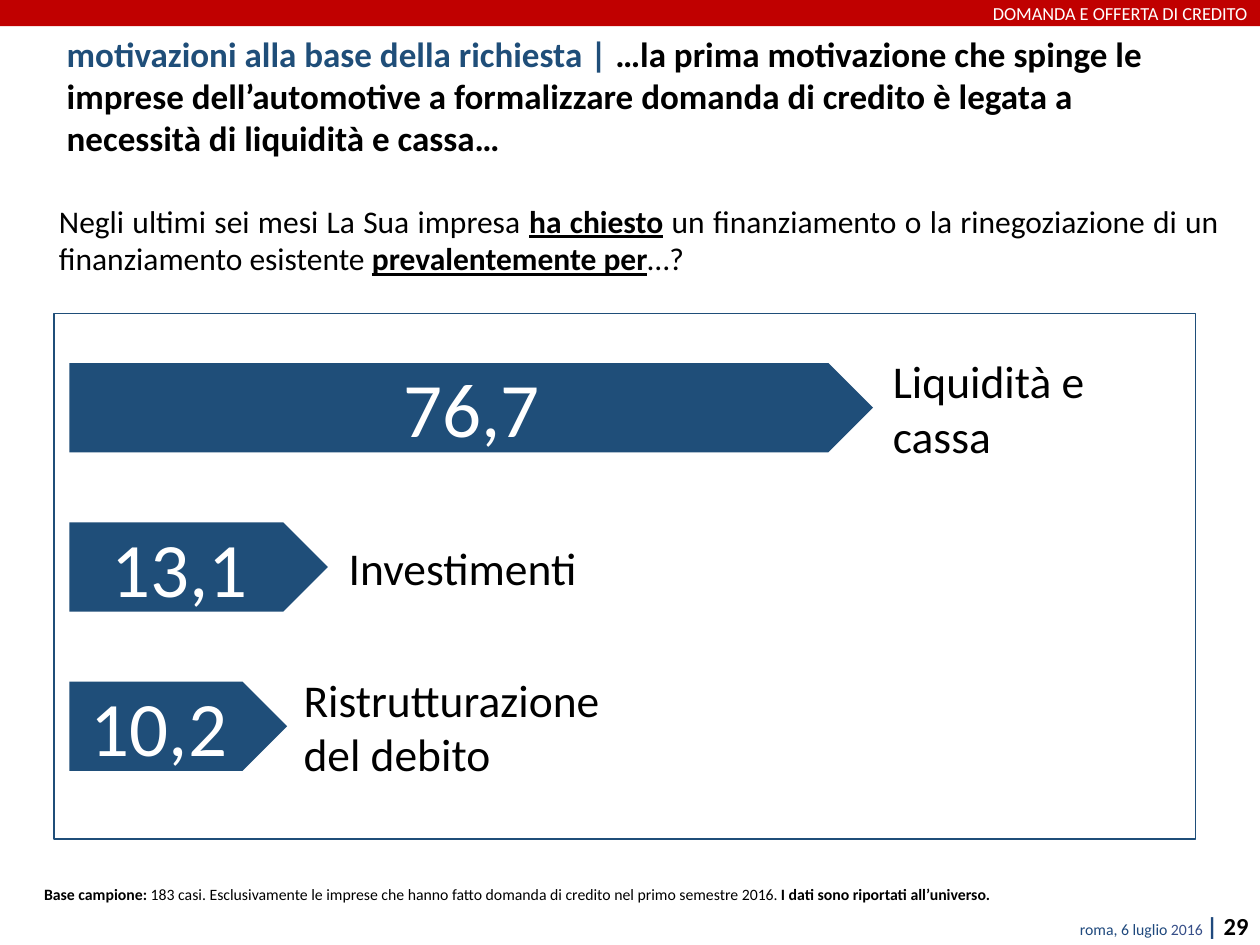
from pptx import Presentation
from pptx.dml.color import RGBColor
from pptx.enum.shapes import MSO_SHAPE
from pptx.enum.text import MSO_ANCHOR, MSO_AUTO_SIZE, PP_ALIGN
from pptx.util import Cm, Pt

NAVY, RED, WHITE, BLACK = "1F4E79", "C00000", "FFFFFF", "000000"
BLUE = "1F497D"


def tint(code):
    """Turn a hex string into a colour."""
    return RGBColor.from_string(code)


def write(frame, text, size=18, color=BLACK, align=PP_ALIGN.LEFT,
          anchor=MSO_ANCHOR.TOP, wrap=True, space=None):
    """Fill a frame with a string or with (string, format) runs."""
    frame.word_wrap = wrap
    frame.auto_size = MSO_AUTO_SIZE.NONE
    frame.vertical_anchor = anchor
    para = frame.paragraphs[0]
    para.alignment = align
    if space:
        para.line_spacing = space
    for words, look in [(text, {})] if isinstance(text, str) else text:
        run = para.add_run()
        run.text = words
        font = run.font
        font.name = "Calibri"
        font.size = Pt(look.get("size", size))
        font.color.rgb = tint(look.get("color", color))
        font.bold = look.get("bold", False)
        font.underline = look.get("under", False)


class Page:
    """Hold the deck, the current slide and its style."""

    def __init__(self):
        """Open a deck with one title-only slide."""
        self.deck = Presentation()
        self.deck.slide_width, self.deck.slide_height = Cm(25.4), Cm(19.05)
        self.slide = self.deck.slides.add_slide(self.deck.slide_layouts[5])

    def title(self, box, text, **look):
        """Place and fill the title."""
        item = self.slide.shapes.title
        item.left, item.top, item.width, item.height = map(Cm, box)
        write(item.text_frame, text, **look)

    def text(self, box, text, **look):
        """Add a text box."""
        item = self.slide.shapes.add_textbox(*map(Cm, box))
        write(item.text_frame, text, **look)

    def shape(self, kind, box, fill=None, line=None):
        """Add a flat preset shape."""
        item = self.slide.shapes.add_shape(kind, *map(Cm, box))
        item.shadow.inherit = False
        if fill:
            item.fill.solid()
            item.fill.fore_color.rgb = tint(fill)
        else:
            item.fill.background()
        if line:
            item.line.color.rgb = tint(line)
            item.line.width = Pt(1)
        else:
            item.line.fill.background()
        return item

    def bar(self, top, width, value, shift, label, gap, room):
        """Add an arrow with its value and its label."""
        left, high = 1.4, 1.8
        self.shape(MSO_SHAPE.PENTAGON, (left, top, width, high), NAVY)
        self.text((left + shift, top - 0.17, 3.28, 2.13), value, size=44,
                  color=WHITE, align=PP_ALIGN.CENTER, wrap=False)
        self.text((left + width + gap, top - 0.35, room, 2.5), label,
                  size=26, anchor=MSO_ANCHOR.MIDDLE)


def main():
    """Build and save the slide."""
    page = Page()
    page.text((7.82, 18.24, 17.6, 0.84), [
        ("roma, 6 luglio ", {"color": BLUE}),
        ("2016 ", {"color": "364E88"}),
        ("| ", {"color": BLUE, "size": 14, "bold": True}),
        ("29", {"size": 14, "bold": True}),
    ], size=9, align=PP_ALIGN.RIGHT)
    strong = {"bold": True, "under": True}
    page.text((0.94, 3.94, 23.88, 1.8), [
        ("Negli ultimi sei mesi La Sua impresa ", {}),
        ("ha chiesto", strong),
        (" un finanziamento o la rinegoziazione di un finanziamento esistente ", {}),
        ("prevalentemente per", strong),
        ("…?", {}),
    ], align=PP_ALIGN.JUSTIFY)
    page.title((1.09, 0.53, 23.39, 2.13), [
        ("motivazioni alla base della richiesta | ", {"color": NAVY, "bold": True}),
        ("…la prima motivazione che spinge le imprese dell’automotive a "
         "formalizzare domanda di credito è legata a necessità di liquidità "
         "e cassa…", {"bold": True}),
    ], size=20)
    band = page.shape(MSO_SHAPE.RECTANGLE, (0, 0, 25.4, 0.53), RED)
    write(band.text_frame, "DOMANDA E OFFERTA DI CREDITO", size=10.5,
          color=WHITE, align=PP_ALIGN.RIGHT, anchor=MSO_ANCHOR.MIDDLE)
    page.text((0.64, 17.68, 24.56, 0.69), [
        ("Base campione: ", {"bold": True}),
        ("183 casi. Esclusivamente le imprese che hanno fatto domanda di "
         "credito nel primo semestre 2016. ", {}),
        ("I dati sono riportati all’universo.", {"bold": True}),
    ], size=9, align=PP_ALIGN.JUSTIFY, space=1.1)
    rows = [
        (16.2, "76,7", 6.47, "Liquidità e cassa", 0.15, 5.74),
        (5.21, "13,1", 0.58, "Investimenti", 0.17, 5.3),
        (4.39, "10,2", 0.17, "Ristrutturazione del debito", 0.08, 7.72),
    ]
    for rank, row in enumerate(rows):
        page.bar(7.32 + 3.21 * rank, *row)
    page.shape(MSO_SHAPE.RECTANGLE, (1.09, 6.32, 23.01, 10.59), line=NAVY)
    page.deck.save("out.pptx")


if __name__ == "__main__":
    main()
